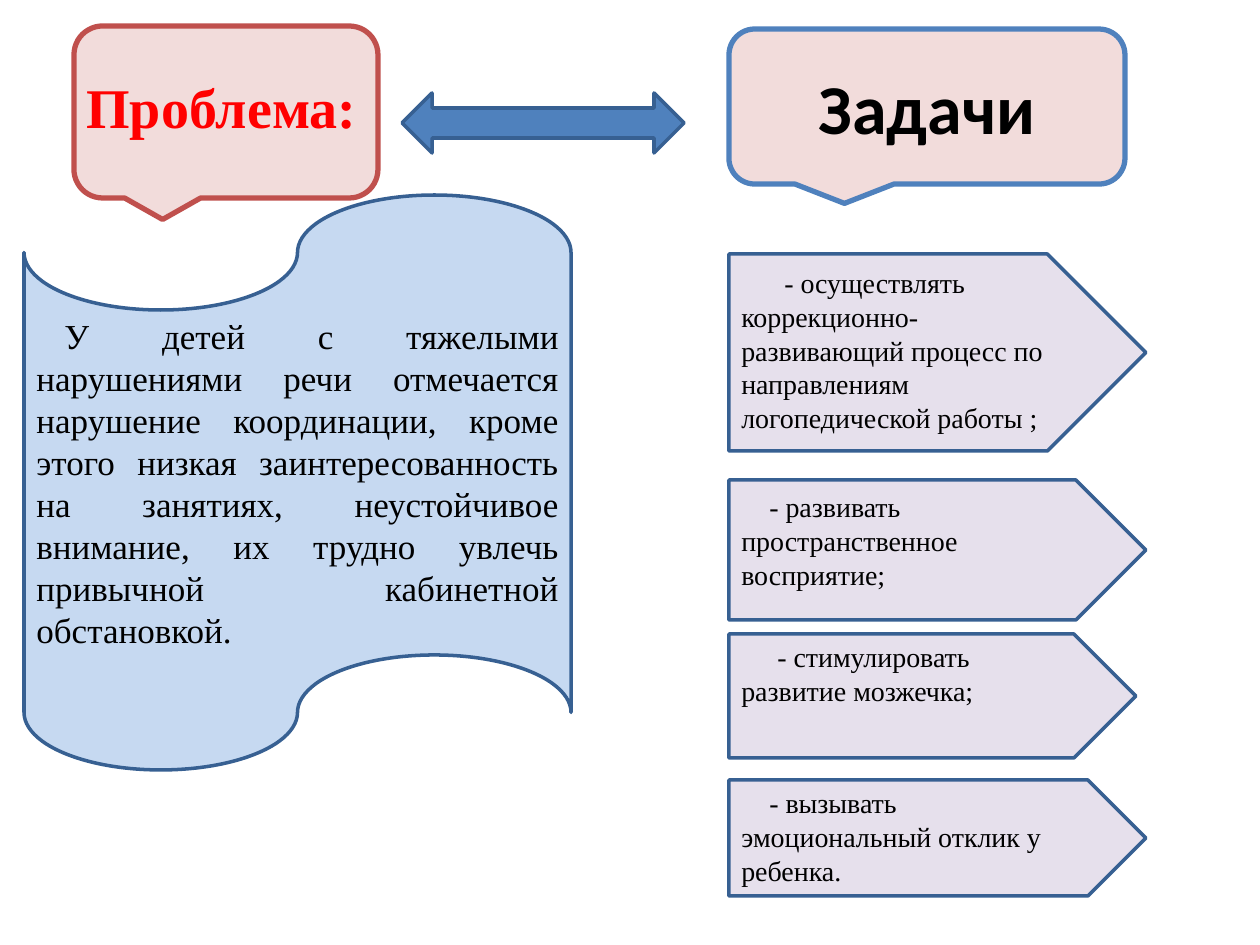
"""Builds a slide that sets a speech therapy problem beside its tasks."""
from pptx import Presentation, util as u
from pptx.dml.color import RGBColor
from pptx.enum import shapes, text

PX = 914400 // 126
HUE = {"rose": "F2DCDB", "red": "C0504D", "blue": "4F81BD", "navy": "376092",
       "sky": "C6D9F1", "lilac": "E6E0EC", "ink": "000000", "alert": "FF0000"}
KIND = shapes.MSO_SHAPE
ALIGN = text.PP_ALIGN
ANCHOR = text.MSO_ANCHOR
SERIF = "Times New Roman"

TITLE = "Проблема:"
GOAL = "Задачи"
ISSUE = ("У детей с тяжелыми нарушениями речи отмечается нарушение координации, "
         "кроме этого низкая заинтересованность на занятиях, неустойчивое внимание, "
         "их трудно увлечь привычной кабинетной обстановкой.")
TASKS = [
    ("- осуществлять коррекционно-развивающий процесс по направлениям "
     "логопедической работы ;", 254, 417, 197, 43, 12),
    ("- развивать пространственное восприятие;", 480, 417, 140, 28, 10),
    ("- стимулировать развитие мозжечка;", 634, 407, 124, 36, 6),
    ("- вызывать эмоциональный отклик у ребенка.", 780, 417, 116, 28, 6),
]


def rgb(hue):
    return RGBColor.from_string(HUE[hue])


def box(kind, area, fill, line, width=2):
    item = slide.shapes.add_shape(kind, *(n * PX for n in area))
    item.shadow.inherit = False
    item.fill.solid()
    item.fill.fore_color.rgb = rgb(fill)
    item.line.color.rgb = rgb(line)
    item.line.width = u.Pt(width)
    return item


def write(item, words, size, font=SERIF, hue="ink", bold=False,
          align=ALIGN.LEFT, anchor=ANCHOR.MIDDLE, indent=0):
    frame = item.text_frame
    frame.word_wrap = True
    frame.vertical_anchor = anchor
    frame.text = words
    para = frame.paragraphs[0]
    para.alignment = align
    if indent:
        props = para._p.get_or_add_pPr()
        props.set("marL", "0")
        props.set("indent", str(indent * PX))
    face = para.runs[0].font
    face.size, face.name, face.bold = u.Pt(size), font, bold
    face.color.rgb = rgb(hue)
    return frame


deck = Presentation()
deck.slide_width, deck.slide_height = 1260 * PX, 945 * PX
slide = deck.slides.add_slide(deck.slide_layouts[6])

box(KIND.ROUNDED_RECTANGULAR_CALLOUT, (74, 26, 304, 172), "rose", "red", 3)
goal = box(KIND.ROUNDED_RECTANGULAR_CALLOUT, (729, 29, 396, 155), "rose", "blue", 3)
write(goal, GOAL, 40, "Calibri", bold=True, align=ALIGN.CENTER)

title = slide.shapes.add_textbox(74 * PX, 66 * PX, 310 * PX, 108 * PX)
write(title, TITLE, 32, hue="alert", bold=True, anchor=ANCHOR.TOP)

arrow = box(KIND.UP_DOWN_ARROW, (513, -18, 60, 282), "blue", "navy")
arrow.rotation = 270

tape = box(KIND.FLOWCHART_PUNCHED_TAPE, (24, 195, 547, 575), "sky", "navy")
write(tape, ISSUE, 20, align=ALIGN.JUSTIFY, indent=28)

for words, top, width, height, indent, inset in TASKS:
    plate = box(KIND.PENTAGON, (729, top, width, height), "lilac", "navy")
    frame = write(plate, words, 16, anchor=ANCHOR.TOP, indent=indent)
    frame.margin_top, frame.margin_bottom = inset * PX, 0
    frame.margin_right = 40 * PX

deck.save("out.pptx")
